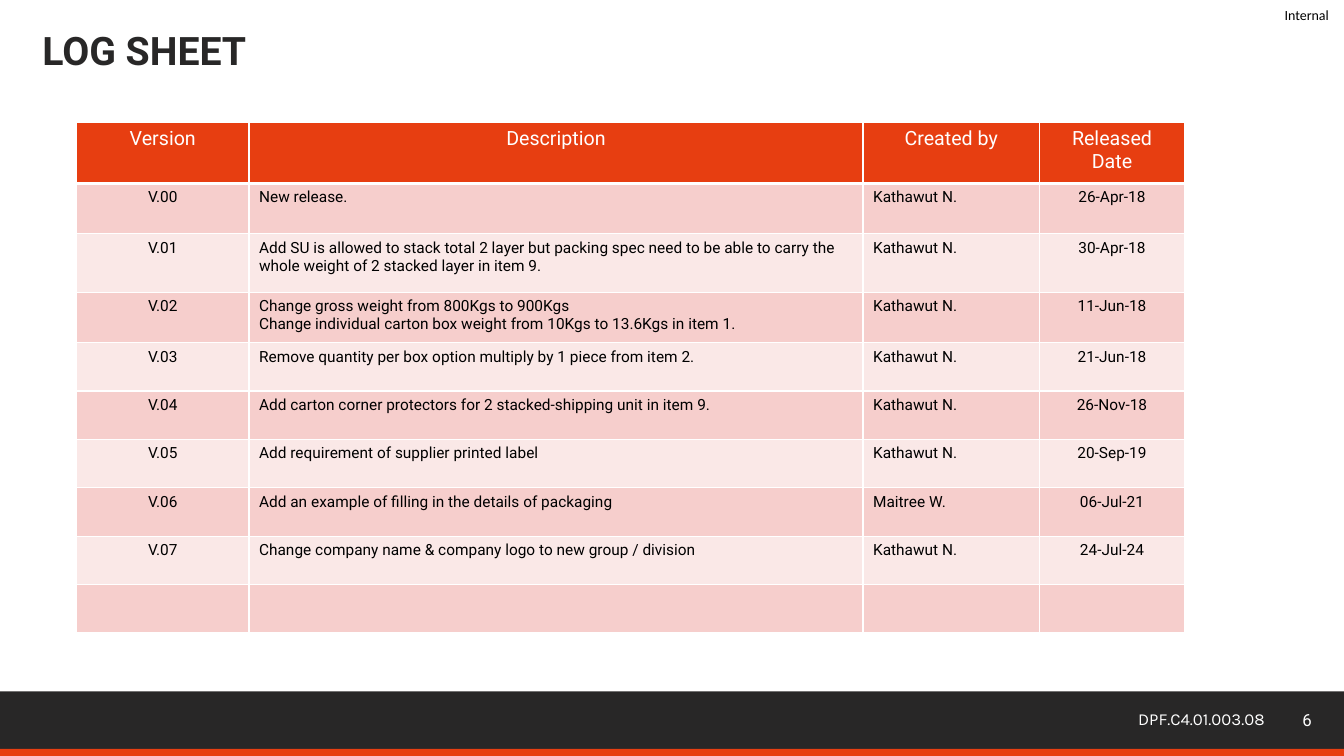
from lxml.etree import SubElement
from pptx import Presentation
from pptx.dml.color import RGBColor
from pptx.enum.shapes import MSO_SHAPE
from pptx.enum.text import MSO_ANCHOR, MSO_AUTO_SIZE, PP_ALIGN
from pptx.oxml.ns import qn
from pptx.util import Inches, Pt

COLORS = {
    "dark": "282727",
    "accent": "E73E11",
    "band_dark": "F6CECC",
    "band_light": "FAE8E7",
    "white": "FFFFFF",
    "black": "000000",
}
COL_WIDTHS = [1.71, 6.09, 1.75, 1.44]
ROW_HEIGHTS = [0.61, 0.5, 0.58, 0.5] + [0.48] * 6
ALIGNMENTS = [PP_ALIGN.CENTER, PP_ALIGN.LEFT, PP_ALIGN.LEFT, PP_ALIGN.CENTER]
LOG_ROWS = [
    ("Version", "Description", "Created by", "Released Date"),
    ("V.00", "New release.", "Kathawut N.", "26-Apr-18"),
    ("V.01", "Add SU is allowed to stack total 2 layer but packing spec need to be "
     "able to carry the whole weight of 2 stacked layer in item 9.",
     "Kathawut N.", "30-Apr-18"),
    ("V.02", "Change gross weight from 800Kgs to 900Kgs\n"
     "Change individual carton box weight from 10Kgs to 13.6Kgs in item 1.",
     "Kathawut N.", "11-Jun-18"),
    ("V.03", "Remove quantity per box option multiply by 1 piece from item 2.",
     "Kathawut N.", "21-Jun-18"),
    ("V.04", "Add carton corner protectors for 2 stacked-shipping unit in item 9.",
     "Kathawut N.", "26-Nov-18"),
    ("V.05", "Add requirement of supplier printed label", "Kathawut N.", "20-Sep-19"),
    ("V.06", "Add an example of filling in the details of packaging",
     "Maitree W.", "06-Jul-21"),
    ("V.07", "Change company name & company logo to new group / division",
     "Kathawut N.", "24-Jul-24"),
    ("", "", "", ""),
]


def rgb(name):
    return RGBColor.from_string(COLORS[name])


def format_text(tf, size, color, font="Roboto", align=PP_ALIGN.LEFT, bold=False):
    for p in tf.paragraphs:
        p.alignment = align
        for r in p.runs:
            r.font.name = font
            r.font.size = Pt(size)
            r.font.bold = bold
            r.font.color.rgb = rgb(color)


def clear_insets(tf):
    tf.margin_left = tf.margin_top = tf.margin_right = tf.margin_bottom = 0


def add_label(s, text, left, top, width, height, size, color, font, align, inset=False):
    tf = s.shapes.add_textbox(Inches(left), Inches(top), Inches(width),
                              Inches(height)).text_frame
    tf.word_wrap = True
    if not inset:
        clear_insets(tf)
        tf.vertical_anchor = MSO_ANCHOR.MIDDLE
    tf.text = text
    format_text(tf, size, color, font, align)


def add_bar(s, left, top, width, height, color):
    sp = s.shapes.add_shape(MSO_SHAPE.RECTANGLE, Inches(left), Inches(top),
                            Inches(width), Inches(height))
    sp.shadow.inherit = False
    sp.fill.solid()
    sp.fill.fore_color.rgb = rgb(color)
    sp.line.fill.background()


def add_footer(s, left, top, width, height):
    stripe = 0.07
    add_bar(s, left, top, width, height, "dark")
    add_bar(s, left, top + height - stripe, width, stripe, "accent")
    right = left + width
    add_label(s, "6", right - 0.91, top + 0.18, 0.59, 0.2, 12, "white",
              "Roboto", PP_ALIGN.RIGHT)
    add_label(s, "DPF.C4.01.003.08", right - 2.14, top + 0.12, 1.79, 0.3, 12, "white",
              "Karla", PP_ALIGN.LEFT, inset=True)


def add_title(s, left, top, width, height):
    sp = s.shapes.title
    sp.left, sp.top = Inches(left), Inches(top)
    sp.width, sp.height = Inches(width), Inches(height)
    tf = sp.text_frame
    tf.text = "LOG SHEET"
    tf.word_wrap = True
    tf.auto_size = MSO_AUTO_SIZE.NONE
    tf.vertical_anchor = MSO_ANCHOR.TOP
    clear_insets(tf)
    tf.paragraphs[0].line_spacing = 0.9
    format_text(tf, 28, "dark", bold=True)


def set_borders(cell, bottom):
    tcPr = cell._tc.get_or_add_tcPr()
    for side, width in (("L", 1), ("R", 1), ("T", 1), ("B", bottom)):
        ln = SubElement(tcPr, qn(f"a:ln{side}"), w=str(Pt(width)))
        fill = SubElement(ln, qn("a:solidFill"))
        SubElement(fill, qn("a:srgbClr"), val=COLORS["white"])


def add_log_table(s, left, top, width, height):
    table = s.shapes.add_table(len(ROW_HEIGHTS), len(COL_WIDTHS), Inches(left),
                               Inches(top), Inches(width), Inches(height)).table
    table.horz_banding = False
    for col, col_width in zip(table.columns, COL_WIDTHS):
        col.width = Inches(col_width)
    for row, row_height in zip(table.rows, ROW_HEIGHTS):
        row.height = Inches(row_height)
    for i, values in enumerate(LOG_ROWS):
        header = i == 0
        band = "accent" if header else "band_dark" if i % 2 else "band_light"
        for j, value in enumerate(values):
            cell = table.cell(i, j)
            set_borders(cell, 3 if header else 1)
            cell.fill.solid()
            cell.fill.fore_color.rgb = rgb(band)
            if not value:
                continue
            cell.text_frame.text = value
            if header:
                format_text(cell.text_frame, 14, "white", align=PP_ALIGN.CENTER)
            else:
                format_text(cell.text_frame, 11, "black", align=ALIGNMENTS[j])


def main():
    prs = Presentation()
    prs.slide_width, prs.slide_height = Inches(13.33), Inches(7.5)
    s = prs.slides.add_slide(prs.slide_layouts[5])
    add_label(s, "Internal", 12.44, 0, 0.74, 0.29, 10, "black", "Calibri",
              PP_ALIGN.RIGHT)
    add_footer(s, 0, 6.86, 13.33, 0.64)
    add_title(s, 0.42, 0.31, 9.21, 0.65)
    add_log_table(s, 0.76, 1.21, sum(COL_WIDTHS), sum(ROW_HEIGHTS))
    prs.save("out.pptx")


if __name__ == "__main__":
    main()
